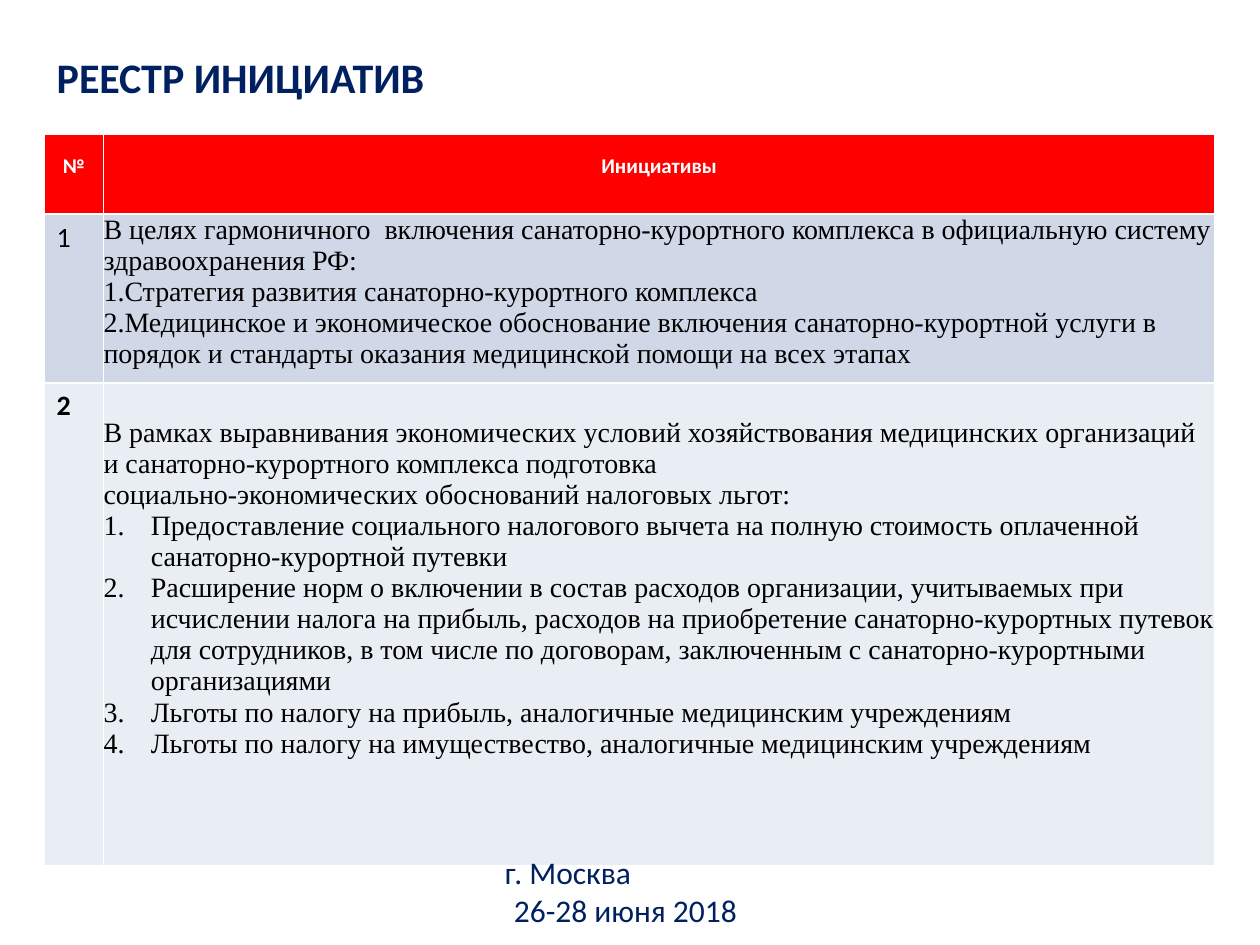
from dataclasses import dataclass

from lxml.etree import SubElement
from pptx import Presentation
from pptx.dml.color import RGBColor
from pptx.enum.text import MSO_ANCHOR, MSO_AUTO_SIZE, PP_ALIGN
from pptx.oxml.ns import qn
from pptx.util import Pt


@dataclass(frozen=True)
class Theme:
    navy: str = "002060"
    white: str = "FFFFFF"
    black: str = "000000"
    red: str = "FF0000"
    bands: tuple = ("D0D8E8", "E9EDF4")
    sans: str = "Calibri"
    serif: str = "Times New Roman"
    title_size: int = 24
    venue_size: int = 18
    body_size: int = 16
    header_size: int = 12


THEME = Theme()

HEADERS = ("№", "Инициативы")
# Each initiative: plain paragraphs, numbered points, space above the text
INITIATIVES = (
    ((
        "В целях гармоничного  включения санаторно-курортного комплекса в официальную систему здравоохранения РФ:",
        "1.Стратегия развития санаторно-курортного комплекса",
        "2.Медицинское и экономическое обоснование включения санаторно-курортной услуги в порядок и стандарты оказания медицинской помощи на всех этапах",
    ), (), 0),
    ((
        "В рамках выравнивания экономических условий хозяйствования медицинских организаций и санаторно-курортного комплекса подготовка",
        "социально-экономических обоснований налоговых льгот:",
    ), (
        "Предоставление социального налогового вычета на полную стоимость оплаченной  санаторно-курортной путевки",
        "Расширение норм о включении в состав расходов организации, учитываемых при исчислении налога на прибыль, расходов на приобретение санаторно-курортных путевок для сотрудников, в том числе по договорам, заключенным с санаторно-курортными организациями",
        "Льготы по налогу на прибыль, аналогичные медицинским учреждениям",
        "Льготы по налогу на имуществество, аналогичные медицинским учреждениям",
    ), 19.5),
)


def write(frame, lines, size, color, face=THEME.sans, bold=False, align=PP_ALIGN.LEFT):
    """Fill a text frame with one paragraph per line and return the paragraphs."""
    for _ in lines[1:]:
        frame.add_paragraph()
    for paragraph, line in zip(frame.paragraphs, lines):
        paragraph.text = line
        paragraph.alignment = align
        font = paragraph.font
        font.name, font.size, font.bold = face, Pt(size), bold
        font.color.rgb = RGBColor.from_string(color)
    return frame.paragraphs


def indent(paragraph, left, first=0):
    properties = paragraph._p.get_or_add_pPr()
    properties.set("marL", str(Pt(left)))
    properties.set("indent", str(Pt(first)))
    return properties


def number(paragraph):
    properties = indent(paragraph, 27, -27)
    SubElement(properties, qn("a:buFont"), typeface="+mj-lt")
    SubElement(properties, qn("a:buAutoNum"), type="arabicPeriod")


def paint(cell, color):
    cell.fill.solid()
    cell.fill.fore_color.rgb = RGBColor.from_string(color)


def place_title(slide, left, top, width, height):
    title = slide.shapes.title
    title.left, title.top, title.width, title.height = map(Pt, (left, top, width, height))
    frame = title.text_frame
    frame.word_wrap = True
    frame.auto_size = MSO_AUTO_SIZE.NONE
    frame.vertical_anchor = MSO_ANCHOR.TOP
    write(frame, ["РЕЕСТР ИНИЦИАТИВ"], THEME.title_size, THEME.navy, bold=True)


def place_register(slide, left, top, width, row_heights):
    register = slide.shapes.add_table(
        len(row_heights), len(HEADERS),
        Pt(left), Pt(top), Pt(width), Pt(sum(row_heights))).table
    number_width = 34
    register.columns[0].width = Pt(number_width)
    register.columns[1].width = Pt(width - number_width)
    for row, height in zip(register.rows, row_heights):
        row.height = Pt(height)

    for column, header in enumerate(HEADERS):
        cell = register.cell(0, column)
        paint(cell, THEME.red)
        heading = write(cell.text_frame, [header], THEME.header_size,
                        THEME.white, bold=True, align=PP_ALIGN.CENTER)[0]
        heading.line_spacing = 1.5

    for index, (intro, points, space_above) in enumerate(INITIATIVES):
        number_cell, text_cell = register.rows[index + 1].cells
        for cell in (number_cell, text_cell):
            paint(cell, THEME.bands[index % 2])
        write(number_cell.text_frame, [str(index + 1)], THEME.body_size,
              THEME.black, bold=index == 1)
        text_cell.margin_left = text_cell.margin_right = text_cell.margin_bottom = 0
        text_cell.margin_top = Pt(space_above)
        paragraphs = write(text_cell.text_frame, intro + points, THEME.body_size,
                           THEME.black, face=THEME.serif)
        for paragraph in paragraphs[len(intro):]:
            number(paragraph)


def place_venue(slide, left, top, width, height):
    frame = slide.shapes.add_textbox(*map(Pt, (left, top, width, height))).text_frame
    frame.word_wrap = True
    frame.vertical_anchor = MSO_ANCHOR.MIDDLE
    city, _ = write(frame, ["г. Москва", "26-28 июня 2018"], THEME.venue_size,
                    THEME.navy, align=PP_ALIGN.CENTER)
    city.alignment = PP_ALIGN.LEFT
    indent(city, 272)


def main():
    presentation = Presentation()
    presentation.slide_width, presentation.slide_height = Pt(720), Pt(540)
    slide = presentation.slides.add_slide(presentation.slide_layouts[5])
    place_title(slide, 25.2, 26, 360, 36)
    place_register(slide, 25.2, 77, 669, (45.4, 96.5, 275.8))
    place_venue(slide, 9.4, 488, 696, 42.5)
    presentation.save("out.pptx")


if __name__ == "__main__":
    main()
